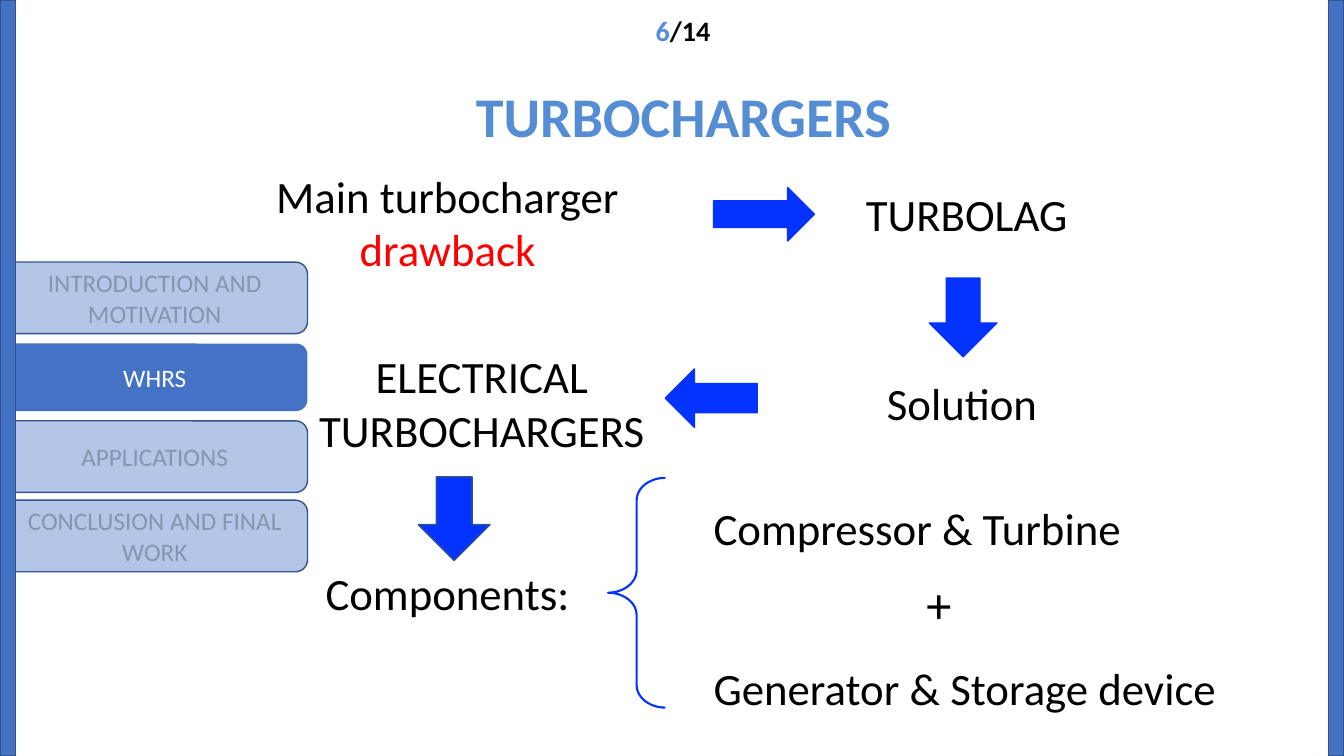
from dataclasses import dataclass

from pptx import Presentation
from pptx import util as u
from pptx.dml.color import RGBColor
from pptx.enum import shapes, text

SLIDE_W, SLIDE_H = u.Inches(13.333), u.Inches(7.5)
SHAPE, ALIGN, ANCHOR = shapes.MSO_SHAPE, text.PP_ALIGN, text.MSO_ANCHOR


@dataclass(frozen=True)
class Theme:
    font: str = "Calibri"
    ink: str = "000000"
    white: str = "FFFFFF"
    heading: str = "548DD4"
    alert: str = "FF0000"
    arrow: str = "0432FF"
    active: str = "4472C4"
    edge: str = "31538F"
    faded: str = "B3C6E7"
    faded_ink: str = "8296B0"
    title_size: int = 40
    plus_size: int = 36
    body_size: int = 32
    counter_size: int = 20
    tab_size: int = 18


THEME = Theme()


def area(left, top, width, height):
    """Turn percentages of the slide into lengths."""
    return (round(SLIDE_W * left / 100), round(SLIDE_H * top / 100),
            round(SLIDE_W * width / 100), round(SLIDE_H * height / 100))


def write(frame, lines, size=THEME.body_size, color=THEME.ink, bold=False,
          align=ALIGN.LEFT, anchor=ANCHOR.TOP):
    """Fill a frame; each line is a list of (words, colour or None) runs."""
    frame.word_wrap = True
    frame.auto_size = text.MSO_AUTO_SIZE.NONE
    frame.vertical_anchor = anchor
    for index, line in enumerate(lines):
        paragraph = frame.add_paragraph() if index else frame.paragraphs[0]
        paragraph.alignment = align
        paragraph.line_spacing = 1.0
        for words, tint in line:
            run = paragraph.add_run()
            run.text = words
            run.font.name = THEME.font
            run.font.size = u.Pt(size)
            run.font.bold = bold
            run.font.color.rgb = RGBColor.from_string(tint or color)


def add_label(slide, place, *lines, **style):
    write(slide.shapes.add_textbox(*area(*place)).text_frame, lines, **style)


def add_figure(slide, kind, place, fill=None, line=None, weight=1):
    figure = slide.shapes.add_shape(kind, *area(*place))
    figure.shadow.inherit = False
    if fill:
        figure.fill.solid()
        figure.fill.fore_color.rgb = RGBColor.from_string(fill)
    else:
        figure.fill.background()
    if line:
        figure.line.color.rgb = RGBColor.from_string(line)
        figure.line.width = u.Pt(weight)
    else:
        figure.line.fill.background()
    return figure


def add_heading(slide):
    title = slide.shapes.title
    title.left, title.top, title.width, title.height = area(1.7, 10.13, 98.3, 11.6)
    write(title.text_frame, [[("TURBOCHARGERS", None)]], size=THEME.title_size,
          color=THEME.heading, bold=True, align=ALIGN.CENTER)


def add_navigation(slide, sections, current):
    top, pitch, height, inset = 34.67, 10.5, 9.47, 0.27
    for index, section in enumerate(sections):
        active = section == current
        trim = inset if active else 0
        place = (0.15, top + index * pitch + trim, 22.73, height - 2 * trim)
        tab = add_figure(slide, SHAPE.ROUNDED_RECTANGLE, place,
                         fill=THEME.active if active else THEME.faded,
                         line=None if active else THEME.edge)
        write(tab.text_frame, [[(section, None)]], size=THEME.tab_size,
              color=THEME.white if active else THEME.faded_ink,
              align=ALIGN.CENTER, anchor=ANCHOR.MIDDLE)


def main():
    deck = Presentation()
    deck.slide_width, deck.slide_height = SLIDE_W, SLIDE_H
    slide = deck.slides.add_slide(deck.slide_layouts[5])
    add_heading(slide)

    # Flow from the drawback to its solution
    add_label(slide, (19.28, 21.6, 28.05, 15.73), [("Main turbocharger", None)],
              [("drawback", THEME.alert)], align=ALIGN.CENTER)
    add_label(slide, (22.88, 45.47, 25.95, 15.73), [("ELECTRICAL", None)],
              [("TURBOCHARGERS", None)], align=ALIGN.CENTER)
    for words, left, top, width in (
            ("TURBOLAG", 63.68, 24, 16.65),
            ("Solution", 65.25, 49.07, 12.83),
            ("Components:", 23.48, 74.13, 20.63),
            ("Compressor & Turbine", 52.35, 65.6, 32.1),
            ("Generator & Storage device", 52.35, 86.8, 39.3)):
        add_label(slide, (left, top, width, 8.53), [(words, None)])
    add_label(slide, (68.18, 75.2, 7.58, 9.47), [("+", None)], size=THEME.plus_size)

    # Arrows between the steps
    for kind, place, line in (
            (SHAPE.RIGHT_ARROW, (53.1, 24.8, 7.5, 7.07), THEME.arrow),
            (SHAPE.DOWN_ARROW, (69.15, 36.8, 5.03, 10.4), THEME.arrow),
            (SHAPE.LEFT_ARROW, (49.5, 48.8, 6.83, 7.73), THEME.arrow),
            (SHAPE.DOWN_ARROW, (31.13, 63.07, 5.33, 11.07), THEME.edge)):
        add_figure(slide, kind, place, fill=THEME.arrow, line=line)

    # Brace around the components
    brace = add_figure(slide, SHAPE.LEFT_BRACE, (45.23, 63.2, 4.28, 30.4),
                       line=THEME.arrow, weight=1.5)
    brace.adjustments[0] = 0.39

    # Section tabs, page counter and side bars
    add_navigation(slide, ("INTRODUCTION AND MOTIVATION", "WHRS", "APPLICATIONS",
                           "CONCLUSION AND FINAL WORK"), current="WHRS")
    add_label(slide, (33.9, 1.07, 33.83, 5.87), [("6", THEME.heading), ("/14", None)],
              size=THEME.counter_size, bold=True, align=ALIGN.CENTER)
    bar_width = 1.17
    for left in (0, 100 - bar_width):
        add_figure(slide, SHAPE.RECTANGLE, (left, 0, bar_width, 100),
                   fill=THEME.active, line=THEME.edge)

    deck.save("out.pptx")


if __name__ == "__main__":
    main()
